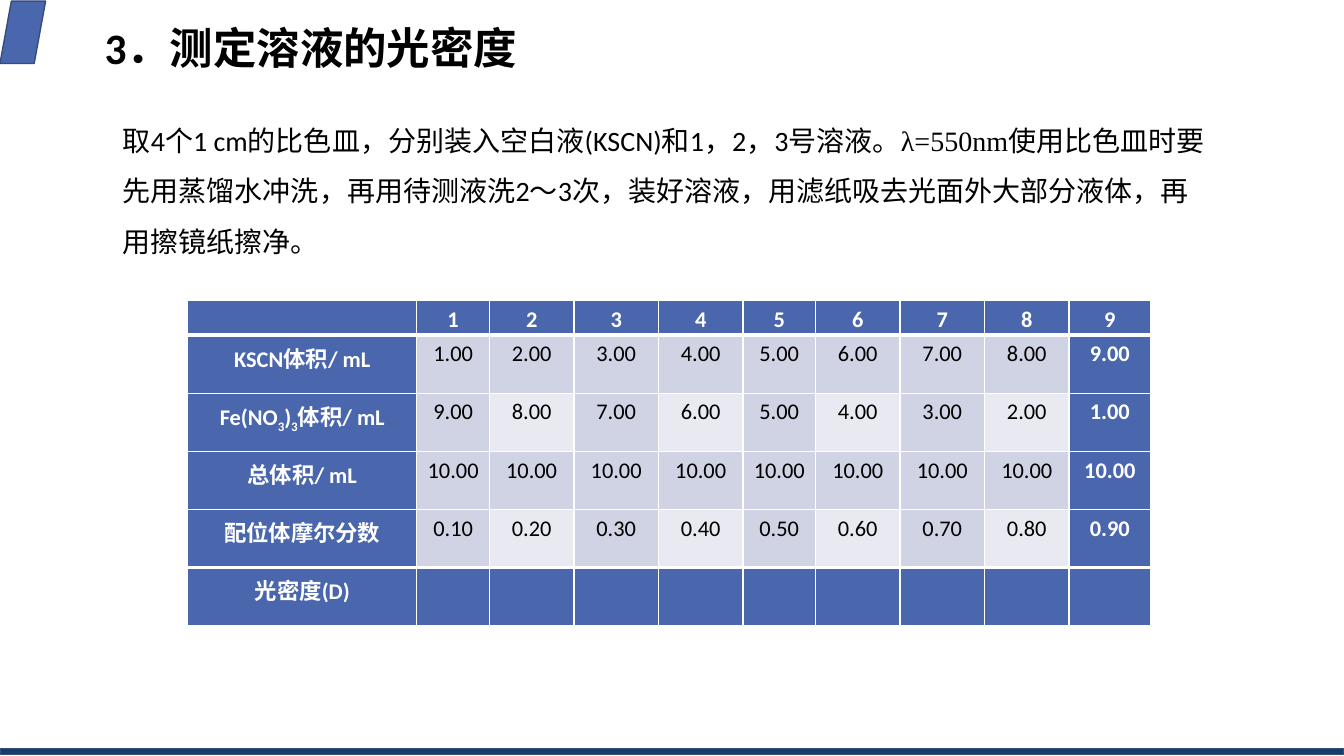
from lxml.etree import SubElement
from pptx import Presentation
from pptx.dml.color import RGBColor
from pptx.enum.shapes import MSO_SHAPE
from pptx.enum.text import MSO_ANCHOR, MSO_AUTO_SIZE, PP_ALIGN
from pptx.oxml.ns import qn
from pptx.util import Pt

COLORS = {
    "black": "000000",
    "white": "FFFFFF",
    "blue": "4A66AC",
    "navy": "143F6A",
    "outline": "374B7F",
    "band": "D0D3E3",
    "pale": "E9EAF1",
}
SLIDE_WIDTH, SLIDE_HEIGHT = 960, 540
COLUMN_WIDTHS = [163.8, 51.8, 60.4, 60.4, 60.4, 51.8, 60.4, 60.4, 60.4, 58.3]
HEADER_HEIGHT, ROW_HEIGHT = 24.5, 41.5
SAMPLES = range(1, 10)
READINGS = [
    [""] + [str(n) for n in SAMPLES],
    ["KSCN体积/ mL"] + [f"{n:.2f}" for n in SAMPLES],
    ["Fe(NO_3_)_3_体积/ mL"] + [f"{10 - n:.2f}" for n in SAMPLES],
    ["总体积/ mL"] + ["10.00" for n in SAMPLES],
    ["配位体摩尔分数"] + [f"{n / 10:.2f}" for n in SAMPLES],
    ["光密度(D)"] + ["" for n in SAMPLES],
]
INSTRUCTIONS = [
    ("取4个1 cm的比色皿，分别装入空白液(KSCN)和1，2，3号溶液。", "Calibri"),
    ("λ=550nm", "Times New Roman"),
    ("使用比色皿时要先用蒸馏水冲洗，再用待测液洗2～3次，装好溶液，"
     "用滤纸吸去光面外大部分液体，再用擦镜纸擦净。", "Calibri"),
]


def color(name):
    """Return the named colour."""
    return RGBColor.from_string(COLORS[name])


def style_font(font, size, color_name, bold=False):
    """Set the size, colour and weight of a Calibri font."""
    font.name = "Calibri"
    font.size = Pt(size)
    font.bold = bold
    font.color.rgb = color(color_name)


def add_ornament(slide, preset, fill_name, left, top, width, height):
    """Add one outlined decorative shape."""
    ornament = slide.shapes.add_shape(
        preset, Pt(left), Pt(top), Pt(width), Pt(height))
    ornament.shadow.inherit = False
    ornament.fill.solid()
    ornament.fill.fore_color.rgb = color(fill_name)
    ornament.line.color.rgb = color("outline")
    ornament.line.width = Pt(1)


def place_title(slide, left, top, width, height):
    """Place and format the heading."""
    title = slide.shapes.title
    title.left, title.top = Pt(left), Pt(top)
    title.width, title.height = Pt(width), Pt(height)
    frame = title.text_frame
    frame.text = " 3．测定溶液的光密度"
    frame.auto_size = MSO_AUTO_SIZE.NONE
    frame.vertical_anchor = MSO_ANCHOR.MIDDLE
    heading = frame.paragraphs[0]
    heading.alignment = PP_ALIGN.LEFT
    heading.line_spacing = 0.9
    style_font(heading.font, 31, "black", True)


def add_instructions(slide, left, top, width, height):
    """Add the paragraph that explains the measurement."""
    frame = slide.shapes.add_textbox(
        Pt(left), Pt(top), Pt(width), Pt(height)).text_frame
    frame.word_wrap = True
    frame.auto_size = MSO_AUTO_SIZE.SHAPE_TO_FIT_TEXT
    procedure = frame.paragraphs[0]
    procedure.line_spacing = 1.5
    style_font(procedure.font, 20, "black")
    for wording, font_name in INSTRUCTIONS:
        run = procedure.add_run()
        run.text = wording
        run.font.name = font_name


def set_borders(cell, top_width, bottom_width):
    """Draw white borders around a cell."""
    properties = cell._tc.get_or_add_tcPr()
    sides = {"L": 1, "R": 1, "T": top_width, "B": bottom_width}
    for side, width in sides.items():
        border = SubElement(properties, qn(f"a:ln{side}"), w=str(Pt(width)))
        fill = SubElement(border, qn("a:solidFill"))
        SubElement(fill, qn("a:srgbClr"), val=COLORS["white"])


def write_cell(cell, wording, color_name, bold):
    """Write centred text, with parts between underscores as subscripts."""
    entry = cell.text_frame.paragraphs[0]
    entry.alignment = PP_ALIGN.CENTER
    entry.line_spacing = 1.2
    style_font(entry.font, 16, color_name, bold)
    for index, part in enumerate(wording.split("_")):
        run = entry.add_run()
        run.text = part
        if index % 2:
            run._r.get_or_add_rPr().set("baseline", "-25000")


def add_readings(slide, left, top):
    """Add the table of volumes, fractions and optical densities."""
    last_row, last_column = len(READINGS) - 1, len(COLUMN_WIDTHS) - 1
    table = slide.shapes.add_table(
        len(READINGS), len(COLUMN_WIDTHS), Pt(left), Pt(top),
        Pt(sum(COLUMN_WIDTHS)), Pt(HEADER_HEIGHT + last_row * ROW_HEIGHT)).table
    table.horz_banding = False
    for column, width in zip(table.columns, COLUMN_WIDTHS):
        column.width = Pt(width)
    for r, wordings in enumerate(READINGS):
        table.rows[r].height = Pt(ROW_HEIGHT if r else HEADER_HEIGHT)
        for c, wording in enumerate(wordings):
            cell = table.cell(r, c)
            cell.margin_left = cell.margin_right = Pt(5)
            cell.margin_top = cell.margin_bottom = Pt(0)
            set_borders(cell, 3 if r in (1, last_row) else 1,
                        3 if r in (0, last_row - 1) else 1)
            edge = r in (0, last_row) or c in (0, last_column)
            band = "band" if r % 2 or c % 2 else "pale"
            cell.fill.solid()
            cell.fill.fore_color.rgb = color("blue" if edge else band)
            if wording:
                write_cell(cell, wording, "white" if edge else "black", edge)


def build_density_slide(deck):
    """Build the slide on measuring optical density."""
    slide = deck.slides.add_slide(deck.slide_layouts[5])
    add_ornament(slide, MSO_SHAPE.RECTANGLE, "navy", 0, 534.5, SLIDE_WIDTH, 4.5)
    add_ornament(slide, MSO_SHAPE.PARALLELOGRAM, "blue", 0, 0.8, 32.6, 44.6)
    place_title(slide, 60.5, 9.4, 368, 53.3)
    add_readings(slide, 134, 214.8)
    add_instructions(slide, 80.6, 72.7, 794, 112.3)


def main():
    """Create and save the presentation."""
    deck = Presentation()
    deck.slide_width, deck.slide_height = Pt(SLIDE_WIDTH), Pt(SLIDE_HEIGHT)
    build_density_slide(deck)
    deck.save("out.pptx")


if __name__ == "__main__":
    main()
